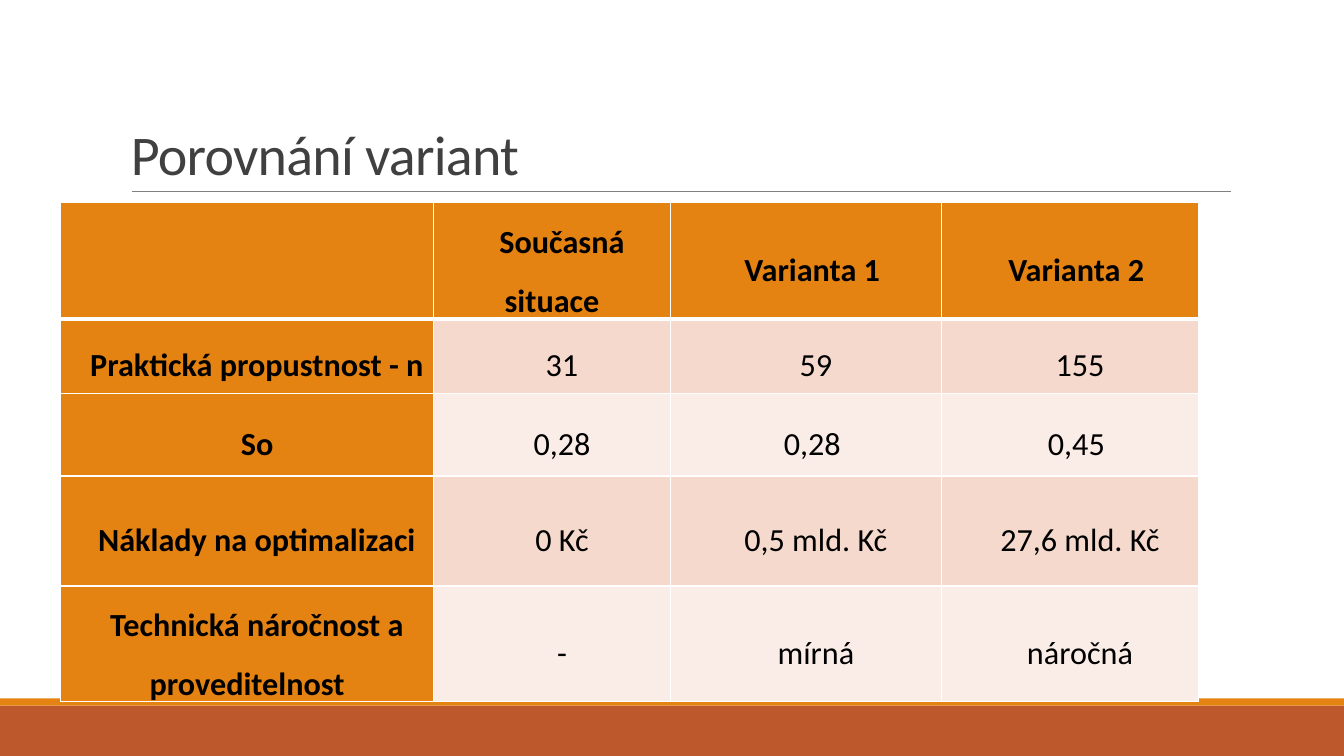
from lxml import etree
from pptx import Presentation
from pptx.dml.color import RGBColor
from pptx.enum.shapes import MSO_CONNECTOR, MSO_SHAPE
from pptx.enum.text import MSO_ANCHOR, PP_ALIGN
from pptx.oxml.ns import qn
from pptx.util import Pt

RECTANGLE = MSO_SHAPE.RECTANGLE
STRAIGHT = MSO_CONNECTOR.STRAIGHT
BOTTOM, MIDDLE = MSO_ANCHOR.BOTTOM, MSO_ANCHOR.MIDDLE
CENTER = PP_ALIGN.CENTER

ORANGE, RUST = "E48312", "BD582C"
BAND_FILLS = ("F5D9CC", "FAEDE7")
COLUMN_WIDTHS = (266.4, 169.2, 193.6, 183.7)
ROW_HEIGHTS = (78.5, 53.2, 59.2, 78.5, 78.5)
COMPARISON = (
    ("", "Současná situace", "Varianta 1 ", "Varianta 2 "),
    ("Praktická propustnost - n", "31", "59", "155"),
    ("So", "0,28", "0,28 ", "0,45 "),
    ("Náklady na optimalizaci", "0 Kč", "0,5 mld. Kč", "27,6 mld. Kč"),
    ("Technická náročnost a proveditelnost", "-", "mírná", "náročná"),
)


def color(value):
    return RGBColor.from_string(value)


class SlideBuilder:
    def __init__(self, page, font_name="Calibri"):
        self.page = page
        self.font_name = font_name

    def style(self, paragraph, size, ink, bold=False):
        font = paragraph.font
        font.name, font.size, font.bold = self.font_name, Pt(size), bold
        font.color.rgb = color(ink)

    def bar(self, left, top, width, height, fill):
        shape = self.page.shapes.add_shape(
            RECTANGLE, Pt(left), Pt(top), Pt(width), Pt(height))
        shape.shadow.inherit = False
        shape.fill.solid()
        shape.fill.fore_color.rgb = color(fill)
        shape.line.fill.background()

    def rule(self, left, right, top, ink, width):
        line = self.page.shapes.add_connector(
            STRAIGHT, Pt(left), Pt(top), Pt(right), Pt(top))
        line.line.color.rgb = color(ink)
        line.line.width = Pt(width)
        etree.SubElement(line._element.spPr, qn("a:effectLst"))

    def title(self, text, left, top, width, height):
        box = self.page.shapes.add_textbox(
            Pt(left), Pt(top), Pt(width), Pt(height))
        frame = box.text_frame
        frame.word_wrap = True
        frame.vertical_anchor = BOTTOM
        paragraph = frame.paragraphs[0]
        span = paragraph.add_run()
        span.text = text
        span.font._element.set("spc", "-50")
        paragraph.line_spacing = 0.85
        self.style(paragraph, 40, "404040")

    def borders(self, cell, top, bottom):
        """Draw white cell edges; top and bottom widths are in points."""
        properties = cell._tc.get_or_add_tcPr()
        edges = (("L", 1), ("R", 1), ("T", top), ("B", bottom))
        for position, (side, width) in enumerate(edges):
            edge = etree.Element(qn(f"a:ln{side}"), w=str(Pt(width)))
            fill = etree.SubElement(edge, qn("a:solidFill"))
            etree.SubElement(fill, qn("a:srgbClr"), val="FFFFFF")
            properties.insert(position, edge)

    def cell(self, cell, text, fill, bold):
        cell.fill.solid()
        cell.fill.fore_color.rgb = color(fill)
        cell.vertical_anchor = MIDDLE
        cell.margin_left = cell.margin_right = Pt(6.75)
        cell.margin_top = cell.margin_bottom = 0
        if not text:
            return
        cell.text = text
        paragraph = cell.text_frame.paragraphs[0]
        paragraph.alignment = CENTER
        paragraph.line_spacing = 1.5
        paragraph.space_after = Pt(6)
        paragraph._p.get_or_add_pPr().set("indent", str(Pt(14.2)))
        self.style(paragraph, 23, "000000", bold)

    def table(self, rows, left, top, widths, heights):
        table = self.page.shapes.add_table(
            len(rows), len(widths), Pt(left), Pt(top),
            Pt(sum(widths)), Pt(sum(heights))).table
        table.horz_banding = False
        for column, width in zip(table.columns, widths):
            column.width = Pt(width)
        for row, height in zip(table.rows, heights):
            row.height = Pt(height)
        for r, texts in enumerate(rows):
            for c, text in enumerate(texts):
                heading = r == 0 or c == 0
                fill = ORANGE if heading else BAND_FILLS[(r - 1) % 2]
                cell = table.cell(r, c)
                self.cell(cell, text, fill, heading)
                self.borders(cell, 3 if r == 1 else 1, 3 if r == 0 else 1)


def main():
    deck = Presentation()
    deck.slide_width, deck.slide_height = Pt(960), Pt(540)
    builder = SlideBuilder(deck.slides.add_slide(deck.slide_layouts[6]))
    builder.bar(0, 504, 960, 36, RUST)
    builder.bar(0, 498.8, 960, 5.2, ORANGE)
    builder.rule(94, 879, 136.8, "808080", 0.5)
    builder.title("Porovnání variant", 86.4, 22.6, 792, 114.2)
    builder.table(COMPARISON, 43.4, 144.9, COLUMN_WIDTHS, ROW_HEIGHTS)
    deck.save("out.pptx")


if __name__ == "__main__":
    main()
